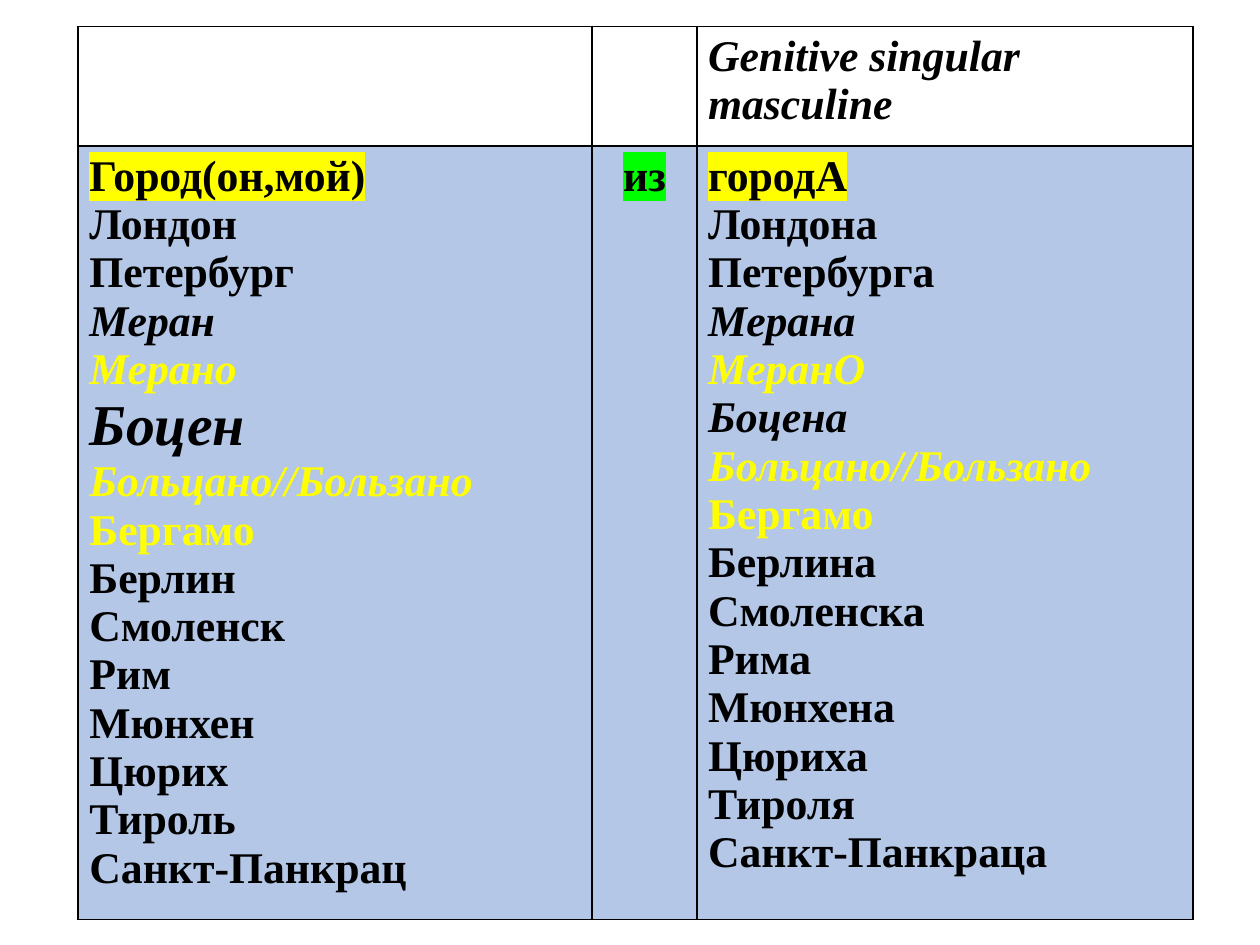
from lxml import etree
from pptx import Presentation
from pptx import util as u
from pptx.dml.color import RGBColor
from pptx.enum import text
from pptx.oxml import ns

BLACK, YELLOW, GREEN, BLUE = "000000", "FFFF00", "00FF00", "B4C7E7"

# Each city: nominative, genitive, style shared by both columns
CITIES = [
    ("Город(он,мой)", "городА", {"highlight": YELLOW}),
    ("Лондон", "Лондона", {}),
    ("Петербург", "Петербурга", {}),
    ("Меран", "Мерана", {"italic": True}),
    ("Мерано", "МеранО", {"italic": True, "color": YELLOW}),
    ("Боцен", "Боцена", {"italic": True}),
    ("Больцано//Бользано", "Больцано//Бользано", {"italic": True, "color": YELLOW}),
    ("Бергамо", "Бергамо", {"color": YELLOW}),
    ("Берлин", "Берлина", {}),
    ("Смоленск", "Смоленска", {}),
    ("Рим", "Рима", {}),
    ("Мюнхен", "Мюнхена", {}),
    ("Цюрих", "Цюриха", {}),
    ("Тироль", "Тироля", {}),
    ("Санкт-Панкрац", "Санкт-Панкраца", {}),
]


def rgb(value):
    return RGBColor.from_string(value)


def add_solid_fill(parent, color):
    fill = etree.SubElement(parent, ns.qn("a:solidFill"))
    etree.SubElement(fill, ns.qn("a:srgbClr"), val=color)


class SlideBuilder:
    font_name = "Times New Roman"
    font_size = 25

    def __init__(self, slide):
        self.slide = slide

    def table(self, left, top, column_widths, row_heights):
        frame = self.slide.shapes.add_table(
            len(row_heights), len(column_widths), u.Inches(left), u.Inches(top),
            u.Inches(sum(column_widths)), u.Inches(sum(row_heights)))
        table = frame.table
        for column, width in zip(table.columns, column_widths):
            column.width = u.Inches(width)
        for row, height in zip(table.rows, row_heights):
            row.height = u.Inches(height)
        return table

    def cell(self, cell, lines=(), fill=None, align=text.PP_ALIGN.LEFT):
        cell.margin_left = cell.margin_right = u.Inches(0.09)
        cell.margin_top = cell.margin_bottom = u.Inches(0.05)
        if fill:
            cell.fill.solid()
            cell.fill.fore_color.rgb = rgb(fill)
        else:
            cell.fill.background()
        self.borders(cell)
        cell.text_frame.text = "\n".join(line for line, style in lines)
        for paragraph, (line, style) in zip(cell.text_frame.paragraphs, lines):
            paragraph.alignment = align
            self.format_run(paragraph.runs[0], **style)

    def borders(self, cell):
        properties = cell._tc.get_or_add_tcPr()
        for index, side in enumerate(("lnL", "lnR", "lnT", "lnB")):
            line = etree.Element(ns.qn("a:" + side), w=str(u.Pt(1)))
            add_solid_fill(line, BLACK)
            properties.insert(index, line)

    def format_run(self, run, size=None, color=BLACK, italic=False, highlight=None):
        font = run.font
        font.name = self.font_name
        font.size = u.Pt(size or self.font_size)
        font.bold = True
        font.italic = italic
        font.color.rgb = rgb(color)
        if highlight:
            # The highlight has to stand before the typeface
            latin = run._r.rPr.find(ns.qn("a:latin"))
            mark = etree.Element(ns.qn("a:highlight"))
            etree.SubElement(mark, ns.qn("a:srgbClr"), val=highlight)
            latin.addprevious(mark)


def main():
    presentation = Presentation()
    presentation.slide_width = u.Inches(10)
    presentation.slide_height = u.Inches(7.5)
    builder = SlideBuilder(presentation.slides.add_slide(presentation.slide_layouts[6]))
    table = builder.table(0.62, 0.21, (4.08, 0.83, 3.94), (0.95, 6.14))

    # Header row
    builder.cell(table.cell(0, 0))
    builder.cell(table.cell(0, 1))
    builder.cell(table.cell(0, 2), [("Genitive singular masculine", {"italic": True})])

    # City names, with one enlarged nominative
    nominatives = [(name, {**style, "size": 33} if name == "Боцен" else style)
                   for name, genitive, style in CITIES]
    genitives = [(genitive, style) for name, genitive, style in CITIES]
    builder.cell(table.cell(1, 0), nominatives, BLUE)
    builder.cell(table.cell(1, 1), [("из", {"highlight": GREEN})], BLUE,
                 text.PP_ALIGN.CENTER)
    builder.cell(table.cell(1, 2), genitives, BLUE)

    presentation.save("out.pptx")


if __name__ == "__main__":
    main()
